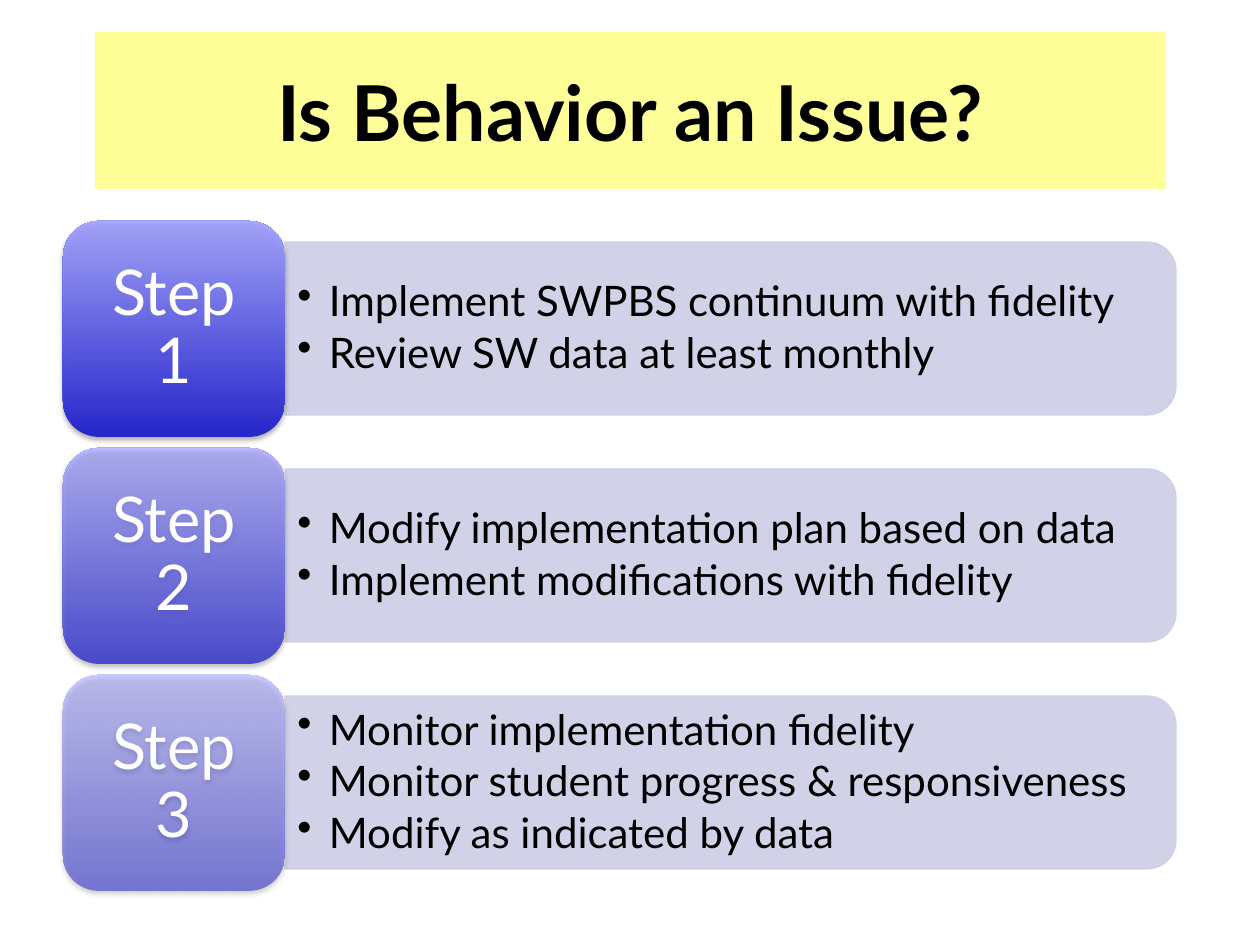
from lxml import etree
from pptx import Presentation
from pptx.dml.color import RGBColor
from pptx.enum.shapes import MSO_SHAPE
from pptx.enum.text import MSO_ANCHOR, PP_ALIGN
from pptx.oxml.ns import qn
from pptx.util import Emu, Pt

PANEL = MSO_SHAPE.ROUND_2_SAME_RECTANGLE
TILE = MSO_SHAPE.ROUNDED_RECTANGLE
MIDDLE = MSO_ANCHOR.MIDDLE
CENTER = PP_ALIGN.CENTER

BLACK = RGBColor(0x00, 0x00, 0x00)
WHITE = RGBColor(0xFF, 0xFF, 0xFF)
YELLOW = RGBColor(0xFF, 0xFF, 0x99)
LILAC = RGBColor(0xCD, 0xCD, 0xE6)
DARK = RGBColor(0x18, 0x18, 0xCE)
LIGHT = RGBColor(0x9F, 0x9F, 0xFF)

# Bullets and tile opacity (percent) of each step
STEPS = [
    (["Implement SWPBS continuum with fidelity",
      "Review SW data at least monthly"], 90),
    (["Modify implementation plan based on data",
      "Implement modifications with fidelity"], 70),
    (["Monitor implementation fidelity",
      "Monitor student progress & responsiveness",
      "Modify as indicated by data"], 50),
]
TOP, PITCH = 221, 227


def px(n):
    return Emu(round(n * 914400 / 126))


def add(parent, tag, **attrs):
    node = etree.SubElement(parent, qn(tag))
    for key, val in attrs.items():
        node.set(key, str(val))
    return node


def fade(shape, pct):
    for color in list(shape.element.spPr.iter(qn("a:srgbClr"))):
        add(color, "a:alpha", val=pct * 1000)


class Deck:
    font = "Lato"

    def __init__(self, width, height):
        self.prs = Presentation()
        self.prs.slide_width, self.prs.slide_height = px(width), px(height)
        self.slide = self.prs.slides.add_slide(self.prs.slide_layouts[5])

    def style(self, para, size, color, bold=False):
        for run in para.runs:
            run.font.name = self.font
            run.font.size = Pt(size)
            run.font.bold = bold
            run.font.color.rgb = color

    def title(self, text, x, y, w, h):
        shape = self.slide.shapes.title
        shape.left, shape.top, shape.width, shape.height = map(px, (x, y, w, h))
        shape.fill.solid()
        shape.fill.fore_color.rgb = YELLOW
        frame = shape.text_frame
        frame.text = text
        frame.vertical_anchor = MIDDLE
        frame.paragraphs[0].alignment = CENTER
        self.style(frame.paragraphs[0], 44, BLACK, True)

    def panel(self, x, y, w, h):
        # Turned a quarter, so that the round corners face right
        left, top = x + (w - h) // 2, y + (h - w) // 2
        shape = self.slide.shapes.add_shape(PANEL, *map(px, (left, top, h, w)))
        shape.rotation = 90
        shape.shadow.inherit = False
        shape.fill.solid()
        shape.fill.fore_color.rgb = LILAC
        shape.line.color.rgb = LILAC
        shape.line.width = Pt(0.75)
        fade(shape, 90)

    def bullets(self, items, x, y, w, h):
        box = self.slide.shapes.add_textbox(*map(px, (x, y, w, h)))
        frame = box.text_frame
        frame.word_wrap = True
        frame.vertical_anchor = MIDDLE
        frame.text = "\n".join(items)
        for para in frame.paragraphs:
            para.line_spacing = 0.9
            para.space_after = Pt(3.6)
            props = para._p.get_or_add_pPr()
            props.set("marL", "228600")
            props.set("indent", "-228600")
            add(props, "a:buChar", char="•")
            self.style(para, 24, BLACK)

    def tile(self, text, x, y, w, h, pct):
        shape = self.slide.shapes.add_shape(TILE, *map(px, (x, y, w, h)))
        shape.line.fill.background()
        shape.fill.gradient()
        shape.fill.gradient_angle = 90
        for stop, color in zip(shape.fill.gradient_stops, (DARK, LIGHT)):
            stop.color.rgb = color
        fade(shape, pct)
        # Soft shadow below
        shape.shadow.inherit = False
        effects = shape.element.spPr.find(qn("a:effectLst"))
        shadow = add(effects, "a:outerShdw", blurRad=Pt(3.1), dist=Pt(1.8),
                     dir=5400000, rotWithShape=0)
        add(add(shadow, "a:srgbClr", val=BLACK), "a:alpha", val=35000)
        frame = shape.text_frame
        frame.word_wrap = True
        frame.vertical_anchor = MIDDLE
        frame.margin_left = frame.margin_right = px(30)
        frame.text = text
        para = frame.paragraphs[0]
        para.alignment = CENTER
        para.line_spacing = 0.9
        para.space_after = Pt(12.6)
        self.style(para, 36, WHITE)


def main():
    deck = Deck(1260, 945)
    deck.title("Is Behavior an Issue?", 95, 32, 1071, 157)
    for i, (items, pct) in enumerate(STEPS):
        y = TOP + i * PITCH
        deck.panel(285, y + 21, 891, 173)
        deck.bullets(items, 285, y + 30, 883, 156)
        deck.tile(f"Step {i + 1}", 63, y, 222, 216, pct)
    deck.prs.save("out.pptx")


if __name__ == "__main__":
    main()
